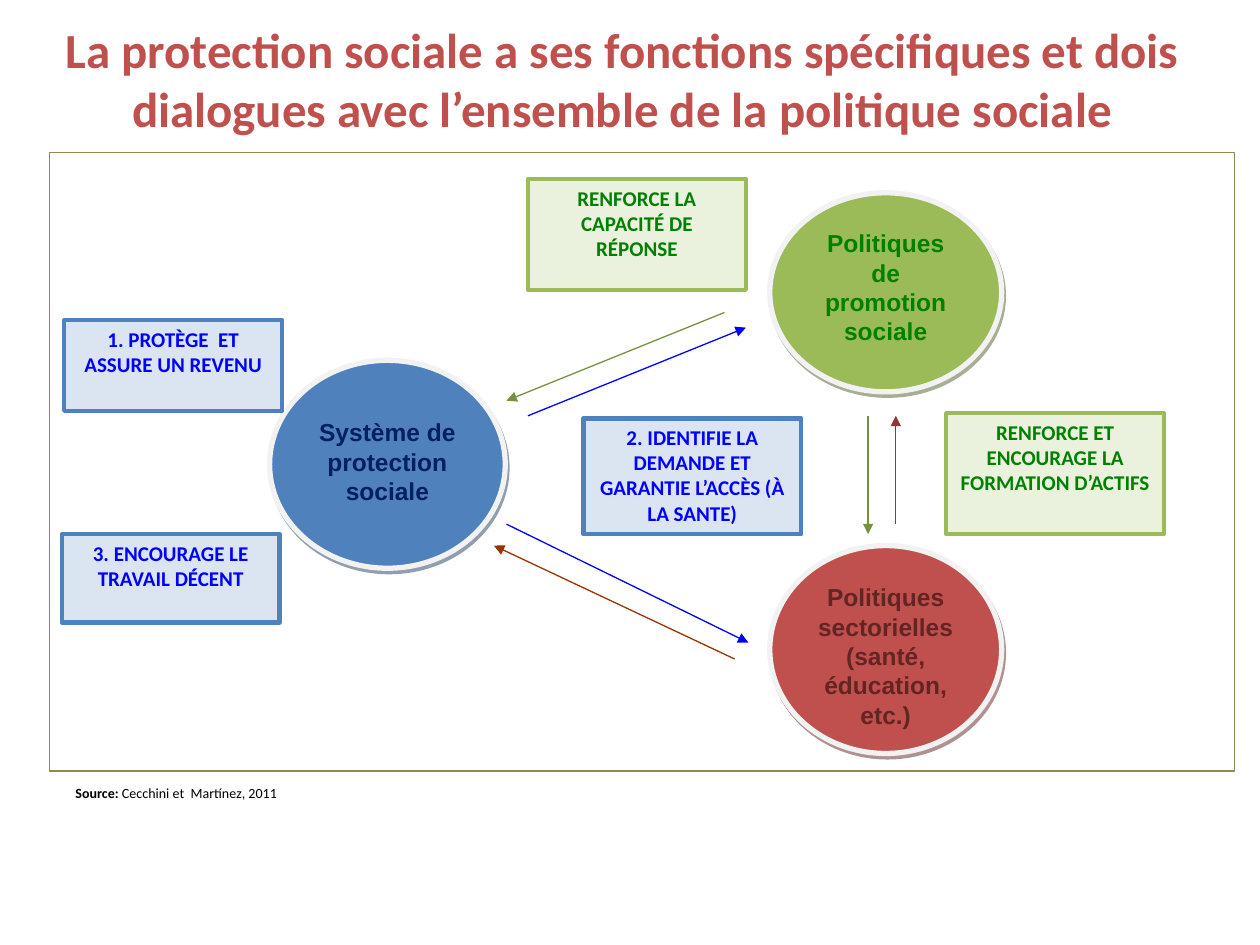
import pptx
import pptx.util
import pptx.dml.color
import pptx.enum.shapes
import pptx.enum.text
import pptx.oxml
import pptx.oxml.ns

Inches = pptx.util.Inches
Pt = pptx.util.Pt
RGB = pptx.dml.color.RGBColor
SHAPE = pptx.enum.shapes.MSO_SHAPE
ALIGN = pptx.enum.text.PP_ALIGN
ANCHOR = pptx.enum.text.MSO_ANCHOR

BLACK = RGB(0x00, 0x00, 0x00)
RED = RGB(0xC0, 0x50, 0x4D)
GREEN = RGB(0x9B, 0xBB, 0x59)
BLUE = RGB(0x4F, 0x81, 0xBD)
PALE_BLUE = RGB(0xDB, 0xE5, 0xF1)
PALE_GREEN = RGB(0xEA, 0xF1, 0xDD)
RIM = RGB(0xF2, 0xF2, 0xF2)
FRAME = RGB(0x93, 0x89, 0x53)
GREEN_TEXT = RGB(0x00, 0x80, 0x00)
BLUE_TEXT = RGB(0x00, 0x00, 0xFF)
NAVY_TEXT = RGB(0x00, 0x20, 0x60)
MAROON_TEXT = RGB(0x63, 0x24, 0x23)
GREEN_SHADOW = RGB(0x4E, 0x61, 0x28)
BLUE_SHADOW = RGB(0x24, 0x3F, 0x60)
RED_SHADOW = RGB(0x62, 0x24, 0x23)
OLIVE_ARROW = RGB(0x76, 0x92, 0x3C)
BROWN_ARROW = RGB(0x99, 0x33, 0x00)
CRIMSON_ARROW = RGB(0x94, 0x36, 0x34)


def drawing_xml(text):
    return pptx.oxml.parse_xml(
        text.replace(" ", f' {pptx.oxml.ns.nsdecls("a")} ', 1))


class Diagram:
    heading_font = "Calibri"
    circle_font = "Arial"
    label_width = 1.73

    def __init__(self, slide):
        self.slide = slide

    def add_words(self, paragraph, text, font, size, color, bold=True):
        for position, line in enumerate(text.split("\n")):
            if position:
                paragraph.add_line_break()
            run = paragraph.add_run()
            run.text = line
            run.font.name = font
            run.font.size = Pt(size)
            run.font.bold = bold
            run.font.color.rgb = color

    def title(self, text, left, top, width, height):
        heading = self.slide.shapes.title
        heading.left, heading.top = Inches(left), Inches(top)
        heading.width, heading.height = Inches(width), Inches(height)
        heading.text_frame.vertical_anchor = ANCHOR.MIDDLE
        paragraph = heading.text_frame.paragraphs[0]
        paragraph.alignment = ALIGN.CENTER
        self.add_words(paragraph, text, self.heading_font, 28, RED)

    def outline(self, kind, left, top, width, height, fill, line, weight):
        shape = self.slide.shapes.add_shape(
            kind, Inches(left), Inches(top), Inches(width), Inches(height))
        shape.shadow.inherit = False
        if fill is None:
            shape.fill.background()
        else:
            shape.fill.solid()
            shape.fill.fore_color.rgb = fill
        shape.line.color.rgb = line
        shape.line.width = Pt(weight)
        return shape

    def frame(self, left, top, width, height):
        self.outline(SHAPE.RECTANGLE, left, top, width, height, None, FRAME, 0.75)

    def caption(self, shape, text, font, size, color):
        shape.text_frame.word_wrap = True
        shape.text_frame.vertical_anchor = ANCHOR.TOP
        paragraph = shape.text_frame.paragraphs[0]
        paragraph.alignment = ALIGN.CENTER
        paragraph.space_after = Pt(10)
        self.add_words(paragraph, text, font, size, color)

    def circle(self, text, left, top, width, height, fill, color, shade, inset=0.05):
        shape = self.outline(SHAPE.OVAL, left, top, width, height, fill, RIM, 3)
        effects = shape._element.spPr.find(pptx.oxml.ns.qn("a:effectLst"))
        effects.append(drawing_xml(
            f'<a:outerShdw dist="{Pt(2.2)}" dir="{63 * 60000}" algn="ctr" rotWithShape="0">'
            f'<a:srgbClr val="{shade}"><a:alpha val="50000"/></a:srgbClr></a:outerShdw>'))
        shape.text_frame.margin_top = Inches(inset)
        self.caption(shape, text, self.circle_font, 14, color)

    def label(self, text, left, top, height, fill, line, color):
        shape = self.outline(SHAPE.RECTANGLE, left, top, self.label_width, height,
                             fill, line, 2.5)
        self.caption(shape, text, self.heading_font, 12, color)

    def arrow(self, start, end, color):
        connector = self.slide.shapes.add_connector(
            pptx.enum.shapes.MSO_CONNECTOR.STRAIGHT,
            *(Inches(value) for value in start + end))
        connector.line.color.rgb = color
        connector.line.width = Pt(0.75)
        connector.line._get_or_add_ln().append(drawing_xml('<a:tailEnd type="triangle"/>'))
        connector._element.spPr.append(drawing_xml("<a:effectLst />"))

    def source(self, heading, reference, left, top, width, height):
        note = self.slide.shapes.add_textbox(
            Inches(left), Inches(top), Inches(width), Inches(height))
        note.text_frame.word_wrap = True
        paragraph = note.text_frame.paragraphs[0]
        properties = paragraph._p.get_or_add_pPr()
        properties.set("marL", str(Inches(0.19)))
        properties.set("indent", str(Inches(-0.19)))
        self.add_words(paragraph, heading, self.heading_font, 8, BLACK)
        self.add_words(paragraph, reference, self.heading_font, 8, BLACK, bold=False)


def main():
    deck = pptx.Presentation()
    deck.slide_width, deck.slide_height = Inches(10), Inches(7.5)
    diagram = Diagram(deck.slides.add_slide(deck.slide_layouts[5]))

    diagram.title("La protection sociale a ses fonctions spécifiques et dois "
                  "dialogues avec l’ensemble de la politique sociale",
                  0.19, 0.03, 9.49, 1.18)
    diagram.frame(0.39, 1.21, 9.41, 4.91)

    diagram.circle("Politiques de promotion sociale", 6.11, 1.53, 1.84, 1.58,
                   GREEN, GREEN_TEXT, GREEN_SHADOW)
    diagram.circle("Système de protection sociale", 2.14, 2.86, 1.87, 1.65,
                   BLUE, NAVY_TEXT, BLUE_SHADOW, inset=0.21)
    diagram.circle("Politiques sectorielles\n(santé, éducation, etc.)",
                   6.11, 4.33, 1.84, 1.65, RED, MAROON_TEXT, RED_SHADOW)

    for text, left, top, height in (
            ("1. PROTÈGE  ET ASSURE UN REVENU", 0.51, 2.54, 0.72),
            ("2. IDENTIFIE LA DEMANDE ET GARANTIE L’ACCÈS (À LA SANTE)",
             4.63, 3.32, 0.92),
            ("3. ENCOURAGE LE TRAVAIL DÉCENT", 0.49, 4.24, 0.7)):
        diagram.label(text, left, top, height, PALE_BLUE, BLUE, BLUE_TEXT)

    for text, left, top, height in (
            ("RENFORCE LA CAPACITÉ DE RÉPONSE", 4.19, 1.42, 0.88),
            ("RENFORCE ET ENCOURAGE LA FORMATION D’ACTIFS", 7.51, 3.28, 0.96)):
        diagram.label(text, left, top, height, PALE_GREEN, GREEN, GREEN_TEXT)

    for start, end, color in (
            ((4.19, 3.3), (5.92, 2.6), BLUE_TEXT),
            ((5.75, 2.48), (4.02, 3.18), OLIVE_ARROW),
            ((4.02, 4.16), (5.94, 5.1), BLUE_TEXT),
            ((5.83, 5.23), (3.92, 4.33), BROWN_ARROW),
            ((6.89, 3.3), (6.89, 4.24), OLIVE_ARROW),
            ((7.11, 4.16), (7.11, 3.3), CRIMSON_ARROW)):
        diagram.arrow(start, end, color)

    diagram.source("Source: ", "Cecchini et  Martínez, 2011", 0.5, 6.18, 8.85, 0.24)
    deck.save("out.pptx")


if __name__ == "__main__":
    main()
